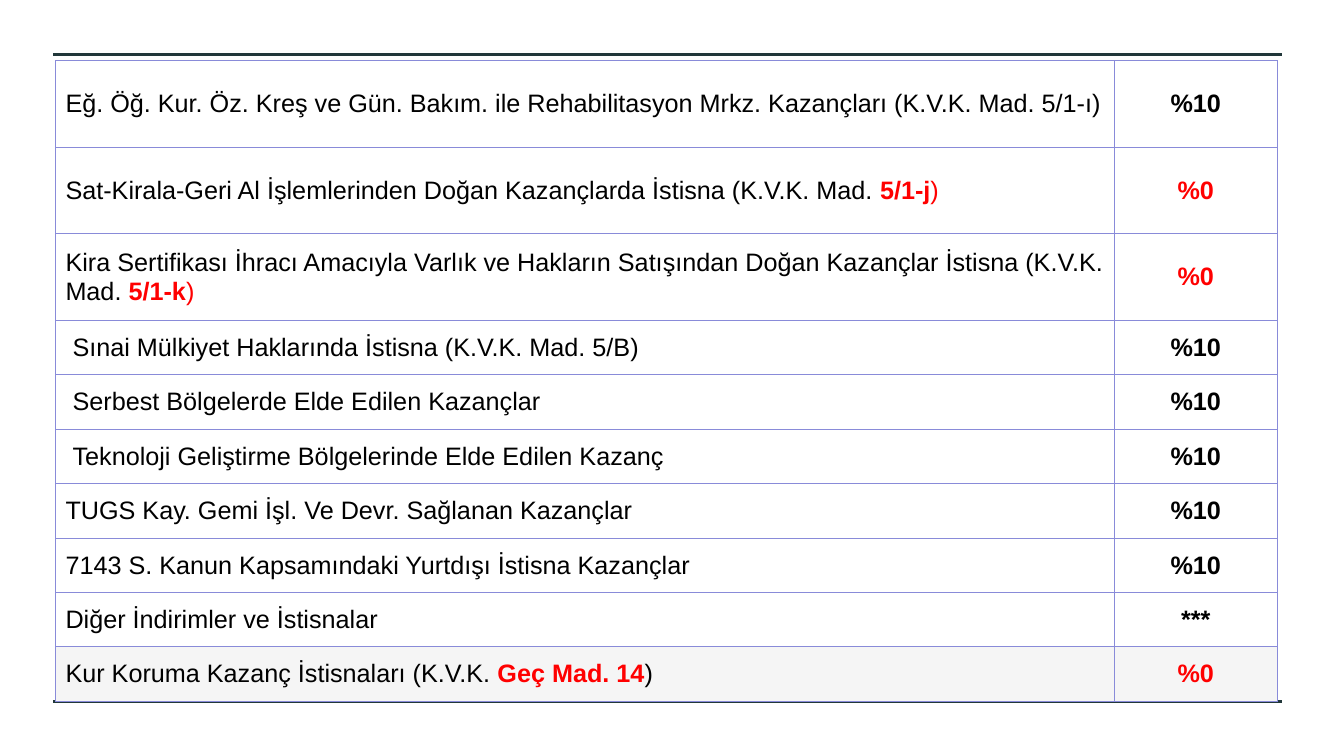
from lxml import etree
from pptx import Presentation
from pptx.dml.color import RGBColor
from pptx.enum.shapes import MSO_CONNECTOR
from pptx.enum.text import MSO_ANCHOR, PP_ALIGN
from pptx.oxml.ns import qn
from pptx.util import Inches, Pt

BLACK = RGBColor(0x00, 0x00, 0x00)
WHITE = RGBColor(0xFF, 0xFF, 0xFF)
RED = RGBColor(0xFF, 0x00, 0x00)
PALE_GREY = RGBColor(0xF5, 0xF5, 0xF5)
DARK_TEAL = RGBColor(0x21, 0x37, 0x3A)
LILAC = RGBColor(0x89, 0x8B, 0xD9)

TALL, SHORT = 0.86, 0.54
MARGIN, INDENT = 0.1, 0.07
COLUMN_WIDTHS = (10.5, 1.62)

# Row height, extra indent, (text before, red bold article, text after), colour of closing text, rate
ROWS = [
    (TALL, 0, ("Eğ. Öğ. Kur. Öz. Kreş ve Gün. Bakım. ile Rehabilitasyon Mrkz. Kazançları "
               "(K.V.K. Mad. 5/1-ı)", "", ""), BLACK, "%10"),
    (TALL, 0, ("Sat-Kirala-Geri Al İşlemlerinden Doğan Kazançlarda İstisna (K.V.K. Mad. ",
               "5/1-j", ")"), RED, "%0"),
    (TALL, 0, ("Kira Sertifikası İhracı Amacıyla Varlık ve Hakların Satışından Doğan "
               "Kazançlar İstisna (K.V.K. Mad. ", "5/1-k", ")"), RED, "%0"),
    (SHORT, INDENT, ("Sınai Mülkiyet Haklarında İstisna (K.V.K. Mad. 5/B)", "", ""), BLACK, "%10"),
    (SHORT, INDENT, ("Serbest Bölgelerde Elde Edilen Kazançlar", "", ""), BLACK, "%10"),
    (SHORT, INDENT, ("Teknoloji Geliştirme Bölgelerinde Elde Edilen Kazanç", "", ""), BLACK, "%10"),
    (SHORT, 0, ("TUGS Kay. Gemi İşl. Ve Devr. Sağlanan Kazançlar", "", ""), BLACK, "%10"),
    (SHORT, 0, ("7143 S. Kanun Kapsamındaki Yurtdışı İstisna Kazançlar", "", ""), BLACK, "%10"),
    (SHORT, 0, ("Diğer İndirimler ve İstisnalar", "", ""), BLACK, "***"),
    (SHORT, 0, ("Kur Koruma Kazanç İstisnaları (K.V.K. ", "Geç Mad. 14", ")"), BLACK, "%0"),
]


def add_rules(page, left, top, width, height):
    """Dark rules along the top and bottom of the box."""
    for y in (top, top + height):
        rule = page.shapes.add_connector(MSO_CONNECTOR.STRAIGHT, Inches(left), Inches(y),
                                         Inches(left + width), Inches(y))
        rule.line.color.rgb = DARK_TEAL
        rule.line.width = Pt(2.25)
        etree.SubElement(rule._element.spPr, qn("a:effectLst"))


def add_span(para, text, color, bold):
    span = para.add_run()
    span.text = text
    span.font.name = "Arial"
    span.font.size = Pt(18)
    span.font.bold = bold
    span.font.color.rgb = color


def format_cell(cell, fill, indent=0):
    cell.vertical_anchor = MSO_ANCHOR.MIDDLE
    cell.margin_left = Inches(MARGIN + indent)
    cell.margin_right = cell.margin_top = cell.margin_bottom = Inches(MARGIN)
    # Borders come before the fill in the cell properties
    properties = cell._tc.get_or_add_tcPr()
    for side in ("lnL", "lnR", "lnT", "lnB"):
        border = etree.SubElement(properties, qn(f"a:{side}"), w=str(Pt(0.75)))
        solid = etree.SubElement(border, qn("a:solidFill"))
        etree.SubElement(solid, qn("a:srgbClr"), val=str(LILAC))
    cell.fill.solid()
    cell.fill.fore_color.rgb = fill


def add_exemptions(page, left, top):
    """Table of exemptions and their rates."""
    height = sum(row[0] for row in ROWS)
    frame = page.shapes.add_table(len(ROWS), len(COLUMN_WIDTHS), Inches(left), Inches(top),
                                  Inches(sum(COLUMN_WIDTHS)), Inches(height))
    table = frame.table
    table.first_row = table.horz_banding = False
    for column, width in zip(table.columns, COLUMN_WIDTHS):
        column.width = Inches(width)

    for index, (row_height, indent, texts, closing_color, rate) in enumerate(ROWS):
        table.rows[index].height = Inches(row_height)
        fill = PALE_GREY if index == len(ROWS) - 1 else WHITE
        name_cell, rate_cell = table.cell(index, 0), table.cell(index, 1)
        format_cell(name_cell, fill, indent)
        format_cell(rate_cell, fill)

        # Name, with its article in red
        name = name_cell.text_frame.paragraphs[0]
        for text, color, bold in zip(texts, (BLACK, RED, closing_color), (False, True, False)):
            if text:
                add_span(name, text, color, bold)

        # Rate, red when zero
        para = rate_cell.text_frame.paragraphs[0]
        para.alignment = PP_ALIGN.CENTER
        add_span(para, rate, RED if rate == "%0" else BLACK, True)


def main():
    deck = Presentation()
    deck.slide_width, deck.slide_height = Inches(13.33), Inches(7.5)
    page = deck.slides.add_slide(deck.slide_layouts[6])
    add_rules(page, 0.53, 0.54, 12.19, 6.42)
    add_exemptions(page, 0.55, 0.6)
    deck.save("out.pptx")


if __name__ == "__main__":
    main()
